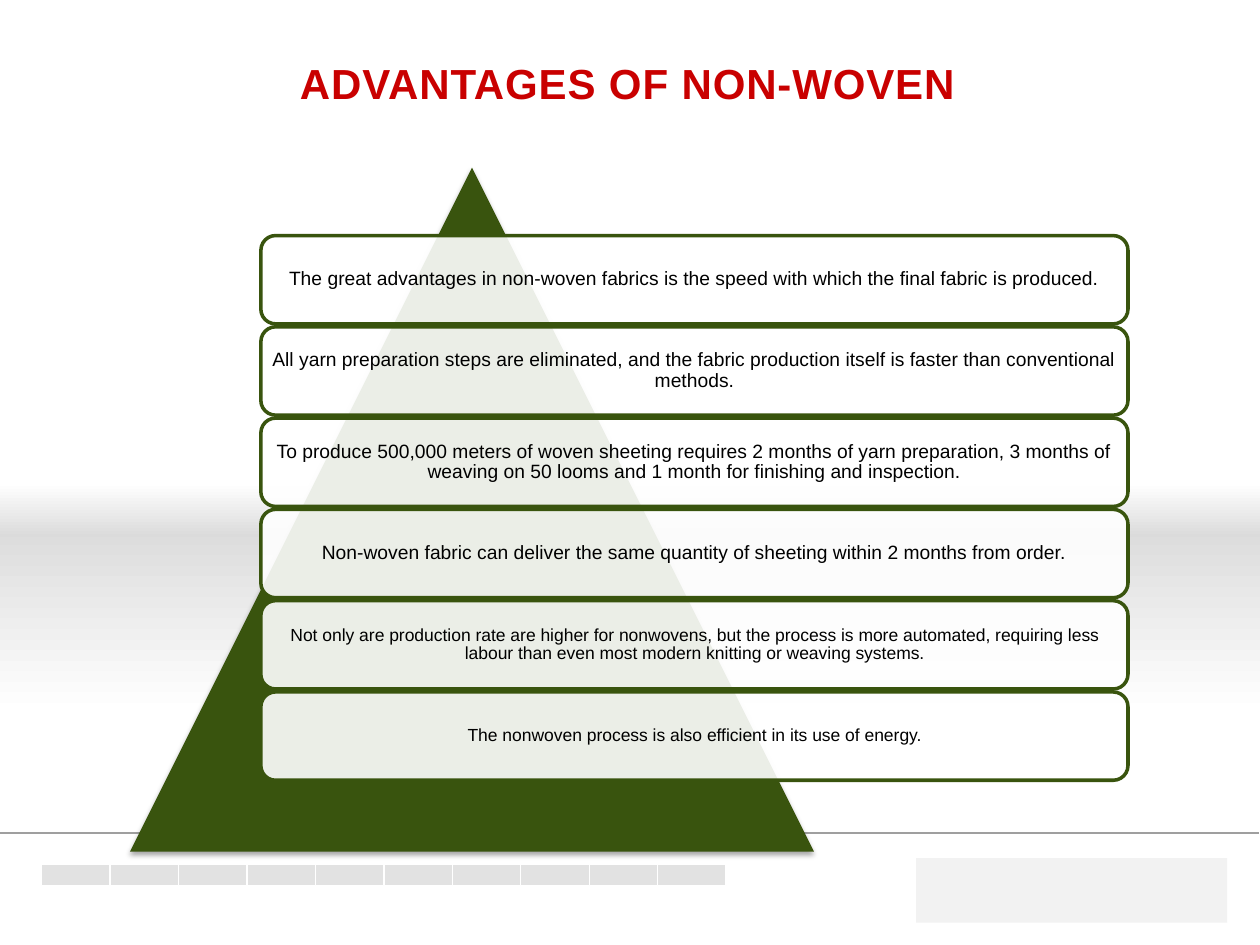
from lxml import etree
from pptx import Presentation
from pptx.dml.color import RGBColor
from pptx.enum.shapes import MSO_CONNECTOR, MSO_SHAPE
from pptx.enum.text import MSO_ANCHOR, MSO_AUTO_SIZE, PP_ALIGN
from pptx.oxml.ns import qn
from pptx.util import Cm, Pt

RECT = MSO_SHAPE.RECTANGLE
ROUND = MSO_SHAPE.ROUNDED_RECTANGLE
CONE = MSO_SHAPE.ISOSCELES_TRIANGLE
LINE = MSO_CONNECTOR.STRAIGHT
MID = MSO_ANCHOR.MIDDLE
CENTER = PP_ALIGN.CENTER
FIXED = MSO_AUTO_SIZE.NONE

GREEN = "39540E"
WHITE = "FFFFFF"


def color(code):
    return RGBColor.from_string(code)


def add_tag(parent, name, **attrs):
    return etree.SubElement(parent, qn(name), attrs)


class Deck:
    font = "Arial"

    def __init__(self, slide):
        self.slide = slide

    def shape(self, kind, box, fill=None, line=None, width=0.75):
        item = self.slide.shapes.add_shape(kind, *map(Cm, box))
        item.shadow.inherit = False
        if fill:
            item.fill.solid()
            item.fill.fore_color.rgb = color(fill)
        if line:
            item.line.color.rgb = color(line)
            item.line.width = Pt(width)
        else:
            item.line.fill.background()
        return item

    def band(self, box, angle, shade):
        fill = self.shape(RECT, box).fill
        fill.gradient()
        fill.gradient_angle = angle
        for stop, code in zip(fill.gradient_stops, (shade, WHITE)):
            stop.color.rgb = color(code)

    def rule(self, left, right, y, code):
        line = self.slide.shapes.add_connector(
            LINE, Cm(left), Cm(y), Cm(right), Cm(y))
        line.line.color.rgb = color(code)
        line.line.width = Pt(0.75)
        add_tag(line._element.spPr, "a:effectLst")

    def text(self, frame, words, size, code, bold=False):
        frame.word_wrap = True
        frame.auto_size = FIXED
        frame.vertical_anchor = MID
        para = frame.paragraphs[0]
        para.alignment = CENTER
        para.line_spacing = 0.9
        run = para.add_run()
        run.text = words
        run.font.name = self.font
        run.font.size = Pt(size)
        run.font.bold = bold
        run.font.color.rgb = color(code)
        return run

    def title(self, box, words):
        head = self.slide.shapes.title
        head.left, head.top, head.width, head.height = map(Cm, box)
        run = self.text(head.text_frame, words, 24, "C90000", bold=True)
        run.font._element.set("spc", "50")

    def peak(self, box):
        item = self.shape(CONE, box, GREEN)
        effect = item._element.spPr.find(qn("a:effectLst"))
        shade = add_tag(effect, "a:outerShdw", blurRad=str(Pt(3.1)),
                        dist=str(Pt(1.8)), dir="5400000", rotWithShape="0")
        tint = add_tag(shade, "a:srgbClr", val="000000")
        add_tag(tint, "a:alpha", val="35000")

    def card(self, box, words, size):
        item = self.shape(ROUND, box, WHITE, GREEN, 2)
        tint = item._element.spPr.find(qn("a:solidFill"))[0]
        add_tag(tint, "a:alpha", val="90000")
        frame = item.text_frame
        pad = Cm(size * 0.01)
        frame.margin_left = frame.margin_right = pad
        frame.margin_top = frame.margin_bottom = pad
        self.text(frame, words, size, "000000")


CARDS = [
    ("The great advantages in non-woven fabrics is the speed with which "
     "the final fabric is produced.", 11),
    ("All yarn preparation steps are eliminated, and the fabric production "
     "itself is faster than conventional methods.", 11),
    ("To produce 500,000 meters of woven sheeting requires 2 months of yarn "
     "preparation, 3 months of weaving on 50 looms and 1 month for finishing "
     "and inspection.", 11),
    ("Non-woven fabric can deliver the same quantity of sheeting within "
     "2 months from order.", 11),
    ("Not only are production rate are higher for nonwovens, but the process "
     "is more automated, requiring less labour than even most modern knitting "
     "or weaving systems.", 10),
    ("The nonwoven process is also efficient in its use of energy.", 10),
]


def main():
    prs = Presentation()
    prs.slide_width, prs.slide_height = Cm(25.4), Cm(19.05)
    deck = Deck(prs.slides.add_slide(prs.slide_layouts[5]))

    # Footer tiles and rule
    for i in range(10):
        deck.shape(RECT, (0.84 + 1.38 * i, 17.42, 1.38, 0.43),
                   "E2E2E2", WHITE)
    deck.rule(0, 25.37, 16.79, "9F9F9F")

    # Shaded bands: one fades down, one fades up
    deck.band((0, 10.77, 25.4, 3.61), 270, "DDDDDD")
    deck.band((0, 9.73, 25.4, 1.09), 90, "DBDBDB")

    # Title and corner panel
    deck.title((4.8, 1.14, 15.7, 1.17), "ADVANTAGES OF NON-WOVEN")
    deck.shape(RECT, (18.47, 17.3, 6.27, 1.3), "F2F2F2")

    # Pyramid with its cards
    deck.peak((2.62, 3.38, 13.79, 13.79))
    for i, (words, size) in enumerate(CARDS):
        deck.card((5.26, 4.75 + 1.84 * i, 17.48, 1.78), words, size)

    prs.save("out.pptx")


if __name__ == "__main__":
    main()
